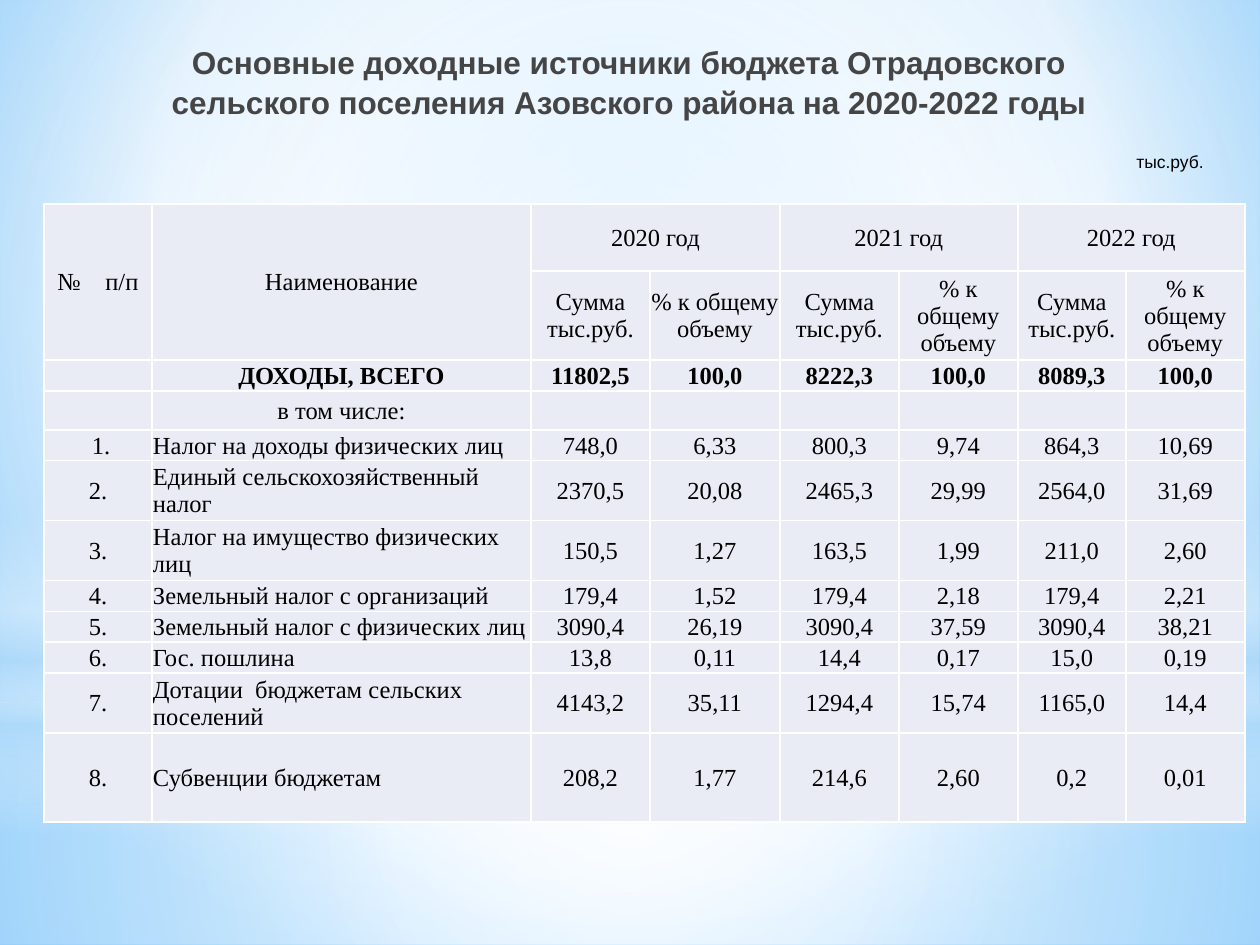
from lxml import etree
from pptx import Presentation
from pptx import util as u
from pptx.dml.color import RGBColor
from pptx.enum import shapes, text
from pptx.oxml.ns import qn

PX = 914400 / 126
CENTER, LEFT, RIGHT = text.PP_ALIGN.CENTER, text.PP_ALIGN.LEFT, text.PP_ALIGN.RIGHT


def px(n):
    return u.Emu(round(n * PX))


def rgb(color):
    return RGBColor.from_string(color)


def add(parent, tag, **attrs):
    return etree.SubElement(parent, qn(tag), {k: str(v) for k, v in attrs.items()})


class Deck:
    heading_font, table_font = "Arial", "Times New Roman"
    ink, heading_ink = "000000", "454545"
    cell_fill, border = "E9EBF5", "FFFFFF"

    def __init__(self):
        self.prs = Presentation()
        self.prs.slide_width, self.prs.slide_height = px(1260), px(945)
        self.s = self.prs.slides.add_slide(self.prs.slide_layouts[5])

    def gradient(self, fill, owner, stops, focus=None, angle=None):
        """Stops are (position %, colour, opacity %); focus is l, t, r, b in %."""
        fill.gradient()
        grad = next(owner.iter(qn("a:gradFill")))
        for child in list(grad):
            grad.remove(child)
        gs_list = add(grad, "a:gsLst")
        for pos, color, opacity in stops:
            gs = add(gs_list, "a:gs", pos=pos * 1000)
            clr = add(gs, "a:srgbClr", val=color)
            if opacity < 100:
                add(clr, "a:alpha", val=opacity * 1000)
        if focus:
            circle = add(grad, "a:path", path="circle")
            add(circle, "a:fillToRect", **{k: v * 1000 for k, v in zip("ltrb", focus)})
        else:
            add(grad, "a:lin", ang=angle * 60000, scaled=0)

    def background(self, stops, focus):
        bg = self.s.background
        self.gradient(bg.fill, self.s.element, stops, focus)

    def glow(self, kind, x, y, w, h, stops, **direction):
        sp = self.s.shapes.add_shape(kind, px(x), px(y), px(w), px(h))
        sp.shadow.inherit = False
        sp.line.fill.background()
        self.gradient(sp.fill, sp.element, stops, **direction)

    def style(self, p, font, size, color, align, bold=False):
        p.alignment = align
        p.font.name, p.font.size = font, u.Pt(size)
        p.font.bold, p.font.color.rgb = bold, rgb(color)

    def title(self, x, y, w, h, words):
        sp = self.s.shapes.title
        sp.element.getparent().append(sp.element)  # in front of the glows
        sp.left, sp.top, sp.width, sp.height = px(x), px(y), px(w), px(h)
        tf = sp.text_frame
        tf.text = words
        tf.word_wrap, tf.auto_size = True, text.MSO_AUTO_SIZE.NONE
        tf.vertical_anchor = text.MSO_ANCHOR.TOP
        p = tf.paragraphs[0]
        p.line_spacing = 1.05
        self.style(p, self.heading_font, 18, self.heading_ink, CENTER, True)

    def label(self, x, y, w, h, words):
        tf = self.s.shapes.add_textbox(px(x), px(y), px(w), px(h)).text_frame
        tf.word_wrap = True
        tf.text = words
        self.style(tf.paragraphs[0], self.heading_font, 10, self.ink, RIGHT)

    def cell(self, c, words, align=CENTER, bold=False):
        c.text = words
        c.vertical_anchor = text.MSO_ANCHOR.MIDDLE
        c.margin_left = c.margin_right = c.margin_top = px(1)
        c.margin_bottom = 0
        self.style(c.text_frame.paragraphs[0], self.table_font, 14, self.ink, align, bold)
        props = c._tc.get_or_add_tcPr()
        for side in "LRTB":
            ln = add(props, f"a:ln{side}", w=12700)
            add(add(ln, "a:solidFill"), "a:srgbClr", val=self.border)
        c.fill.solid()
        c.fill.fore_color.rgb = rgb(self.cell_fill)

    def table(self, x, y, widths, heights, rows, merges, bold_row, first_item):
        table = self.s.shapes.add_table(len(rows), len(widths), px(x), px(y),
                                        px(sum(widths)), px(sum(heights))).table
        for col, w in zip(table.columns, widths):
            col.width = px(w)
        for row, h in zip(table.rows, heights):
            row.height = px(h)
        for i, row in enumerate(rows):
            for j, words in enumerate(row):
                align = LEFT if j == 1 and i >= first_item else CENTER
                self.cell(table.cell(i, j), words, align, i == bold_row)
        for start, end in merges:
            table.cell(*start).merge(table.cell(*end))


HEADER = [
    ["№    п/п", "Наименование", "2020 год", "", "2021 год", "", "2022 год", ""],
    ["", ""] + ["Сумма тыс.руб.", "% к общему объему"] * 3,
    ["", "ДОХОДЫ, ВСЕГО", "11802,5", "100,0", "8222,3", "100,0", "8089,3", "100,0"],
    ["", "в том числе:"] + [""] * 6,
]
ITEMS = [
    [" 1.", "Налог на доходы физических лиц", "748,0", "6,33", "800,3", "9,74", "864,3", "10,69"],
    ["2.", "Единый сельскохозяйственный налог", "2370,5", "20,08", "2465,3", "29,99", "2564,0", "31,69"],
    ["3.", "Налог на имущество физических лиц", "150,5", "1,27", "163,5", "1,99", "211,0", "2,60"],
    ["4.", "Земельный налог с организаций", "179,4", "1,52", "179,4", "2,18", "179,4", "2,21"],
    ["5.", "Земельный налог с физических лиц", "3090,4", "26,19", "3090,4", "37,59", "3090,4", "38,21"],
    ["6.", "Гос. пошлина", "13,8", "0,11", "14,4", "0,17", "15,0", "0,19"],
    ["7.", "Дотации  бюджетам сельских поселений", "4143,2", "35,11", "1294,4", "15,74", "1165,0", "14,4"],
    ["8.", "Субвенции бюджетам", "208,2", "1,77", "214,6", "2,60", "0,2", "0,01"],
]


def main():
    d = Deck()
    rect, oval = shapes.MSO_SHAPE.RECTANGLE, shapes.MSO_SHAPE.OVAL
    white, sky, middle = "FFFFFF", "B4DCFA", (50, 50, 50, 50)

    # Background and its soft glows
    d.background([(0, "9ED5FF", 100), (60, white, 100), (100, "5BB9FF", 100)], (20, 10, 20, 60))
    d.glow(rect, 0, 703, 1260, 242, [(0, white, 91), (37, white, 76), (100, sky, 79)], focus=middle)
    d.glow(rect, 0, 0, 1260, 703, [(0, white, 89), (48, white, 62), (100, sky, 79)], focus=middle)
    d.glow(rect, 0, 519, 1260, 315,
           [(0, white, 0), (29, white, 30), (45, sky, 40), (55, white, 26), (65, sky, 60), (100, white, 0)],
           angle=90)
    d.glow(oval, 0, 220, 1260, 703, [(0, white, 100), (56, white, 0)], focus=middle)

    # Heading and unit
    d.title(152, 35, 954, 158,
            "Основные доходные источники бюджета Отрадовского "
            "сельского поселения Азовского района на 2020-2022 годы")
    d.label(998, 145, 218, 34, "тыс.руб.")

    # Income table: number and name span two rows, each year spans two columns
    merges = [((0, j), (1, j)) for j in (0, 1)] + [((0, j), (0, j + 1)) for j in (2, 4, 6)]
    d.table(44, 204, [108, 379, 119, 130, 119, 119, 108, 119],
            [67, 89, 31, 39, 30, 60, 60, 31, 30, 31, 60, 89],
            HEADER + ITEMS, merges, bold_row=2, first_item=len(HEADER))

    d.prs.save("out.pptx")


if __name__ == "__main__":
    main()
